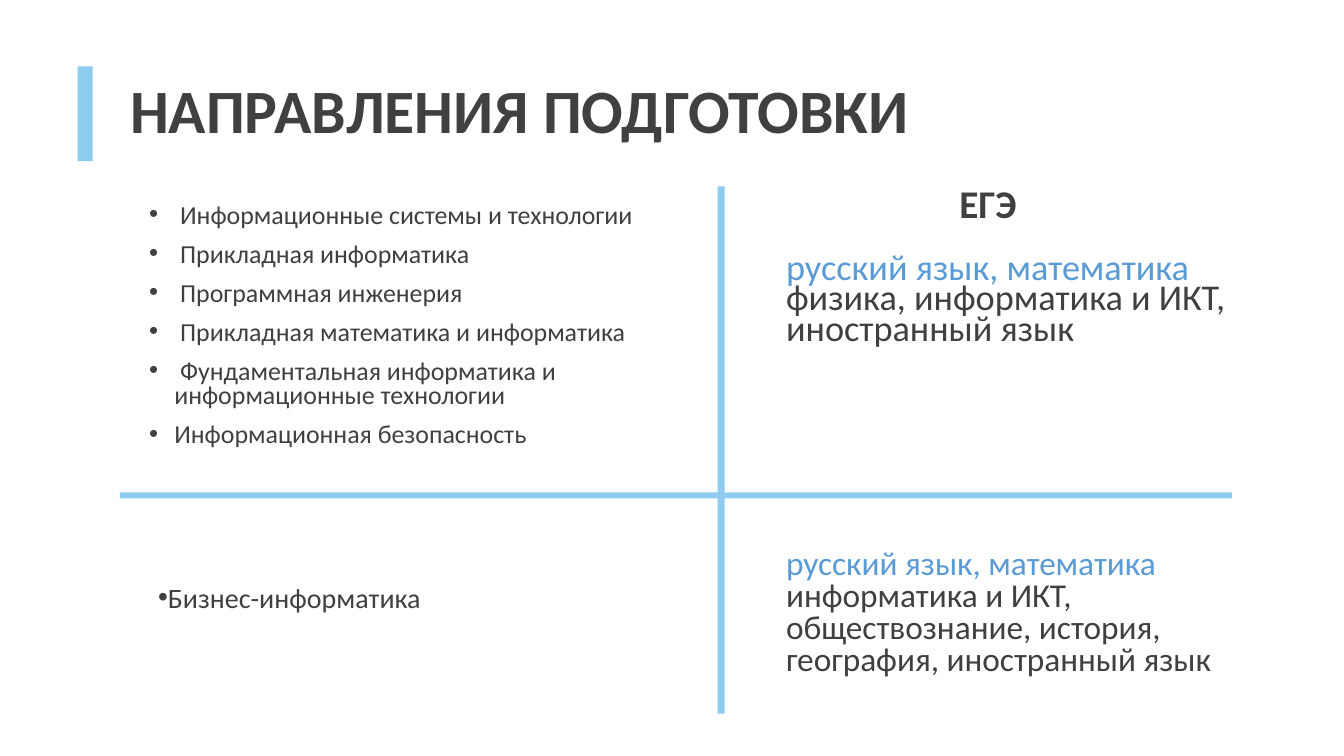
"""Build the slide that lists degree programmes and their entrance exams."""
from dataclasses import dataclass

from lxml import etree
from pptx import Presentation
from pptx.dml.color import RGBColor
from pptx.enum.shapes import MSO_SHAPE
from pptx.enum.text import MSO_ANCHOR, MSO_AUTO_SIZE, PP_ALIGN
from pptx.oxml.ns import qn
from pptx.util import Pt

RECT = MSO_SHAPE.RECTANGLE
MIDDLE, TOP = MSO_ANCHOR.MIDDLE, MSO_ANCHOR.TOP
NO_FIT, GROW = MSO_AUTO_SIZE.NONE, MSO_AUTO_SIZE.SHAPE_TO_FIT_TEXT
LEFT = PP_ALIGN.LEFT
FONT = "Calibri"
COLORS = {"text": "404040", "accent": "5B9BD5", "bar": "8FCAEF"}
TITLE = "НАПРАВЛЕНИЯ ПОДГОТОВКИ"


@dataclass(frozen=True)
class Box:
    left: float
    top: float
    width: float
    height: float

    def lengths(self) -> tuple:
        return Pt(self.left), Pt(self.top), Pt(self.width), Pt(self.height)


@dataclass(frozen=True)
class Run:
    text: str
    color: str = "text"


@dataclass(frozen=True)
class Block:
    box: Box
    size: float
    paragraphs: tuple[tuple[Run, ...], ...]
    line: float = 1.0
    before: float = 0
    bold: bool = False
    wrap: bool = True
    bullet: tuple[float, float] | None = None


PROGRAMMES = (
    " Информационные системы и технологии",
    " Прикладная информатика",
    " Программная инженерия",
    " Прикладная математика и информатика",
    " Фундаментальная информатика и информационные технологии",
    "Информационная безопасность",
)

BARS = (
    Box(55.4, 47.5, 10.8, 67.7),
    Box(512.6, 133.2, 5.04, 376.6),
    Box(85.7, 351.7, 794.2, 4.3),
)

BLOCKS = (
    Block(Box(99.4, 142.6, 406.8, 190.1), 18.5,
          tuple((Run(name),) for name in PROGRAMMES),
          line=0.8, before=10, bullet=(18, -18)),
    Block(Box(554.4, 179.3, 339.8, 79.2), 25.9,
          ((Run("русский язык, математика ", "accent"),
            Run("физика, информатика и ИКТ, иностранный язык")),),
          line=0.7, before=10),
    Block(Box(678.2, 124.6, 56.2, 41), 28, ((Run("ЕГЭ"),),),
          bold=True, wrap=False),
    Block(Box(91.4, 411.1, 217.4, 31.7), 20, ((Run("Бизнес-информатика"),),),
          wrap=False, bullet=(0, 14.4)),
    Block(Box(554.4, 389.5, 339.8, 103.7), 23.8,
          ((Run("русский язык, математика", "accent"),
            Run(" информатика и ИКТ, обществознание, история, "
                "география, иностранный язык")),),
          line=0.8, before=10),
)


def add_run(p, run: Run, size: float, bold: bool) -> None:
    """Append one formatted run to a paragraph."""
    r = p.add_run()
    r.text = run.text
    r.font.name = FONT
    r.font.size = Pt(size)
    r.font.bold = bold
    r.font.color.rgb = RGBColor.from_string(COLORS[run.color])


def set_bullet(p, margin: float, indent: float) -> None:
    """Give a paragraph a round bullet and its indents."""
    pPr = p._p.get_or_add_pPr()
    pPr.set("marL", str(int(Pt(margin))))
    pPr.set("indent", str(int(Pt(indent))))
    etree.SubElement(pPr, qn("a:buFont")).set("typeface", "Arial")
    etree.SubElement(pPr, qn("a:buChar")).set("char", "•")


def add_title(s) -> None:
    """Place and format the title placeholder."""
    sp = s.shapes.title
    sp.left, sp.top, sp.width, sp.height = Box(85.7, 28.8, 828, 104.4).lengths()
    tf = sp.text_frame
    tf.auto_size = NO_FIT
    tf.vertical_anchor = MIDDLE
    p = tf.paragraphs[0]
    p.alignment = LEFT
    p.line_spacing = 0.9
    add_run(p, Run(TITLE), 44, True)


def add_bar(s, box: Box) -> None:
    """Draw one plain coloured bar."""
    sp = s.shapes.add_shape(RECT, *box.lengths())
    sp.shadow.inherit = False
    sp.fill.solid()
    sp.fill.fore_color.rgb = RGBColor.from_string(COLORS["bar"])
    sp.line.fill.background()


def add_block(s, block: Block) -> None:
    """Draw one text box with its paragraphs."""
    tf = s.shapes.add_textbox(*block.box.lengths()).text_frame
    tf.word_wrap = block.wrap
    tf.auto_size = NO_FIT if block.wrap else GROW
    tf.vertical_anchor = TOP
    for i, runs in enumerate(block.paragraphs):
        p = tf.add_paragraph() if i else tf.paragraphs[0]
        p.alignment = LEFT
        p.line_spacing = block.line
        p.space_before = Pt(block.before)
        if block.bullet:
            set_bullet(p, *block.bullet)
        for run in runs:
            add_run(p, run, block.size, block.bold)


def main() -> None:
    """Build and save the slide."""
    prs = Presentation()
    prs.slide_width, prs.slide_height = Pt(960), Pt(540)
    s = prs.slides.add_slide(prs.slide_layouts[5])
    add_title(s)
    for box in BARS:
        add_bar(s, box)
    for block in BLOCKS:
        add_block(s, block)
    prs.save("out.pptx")


if __name__ == "__main__":
    main()
